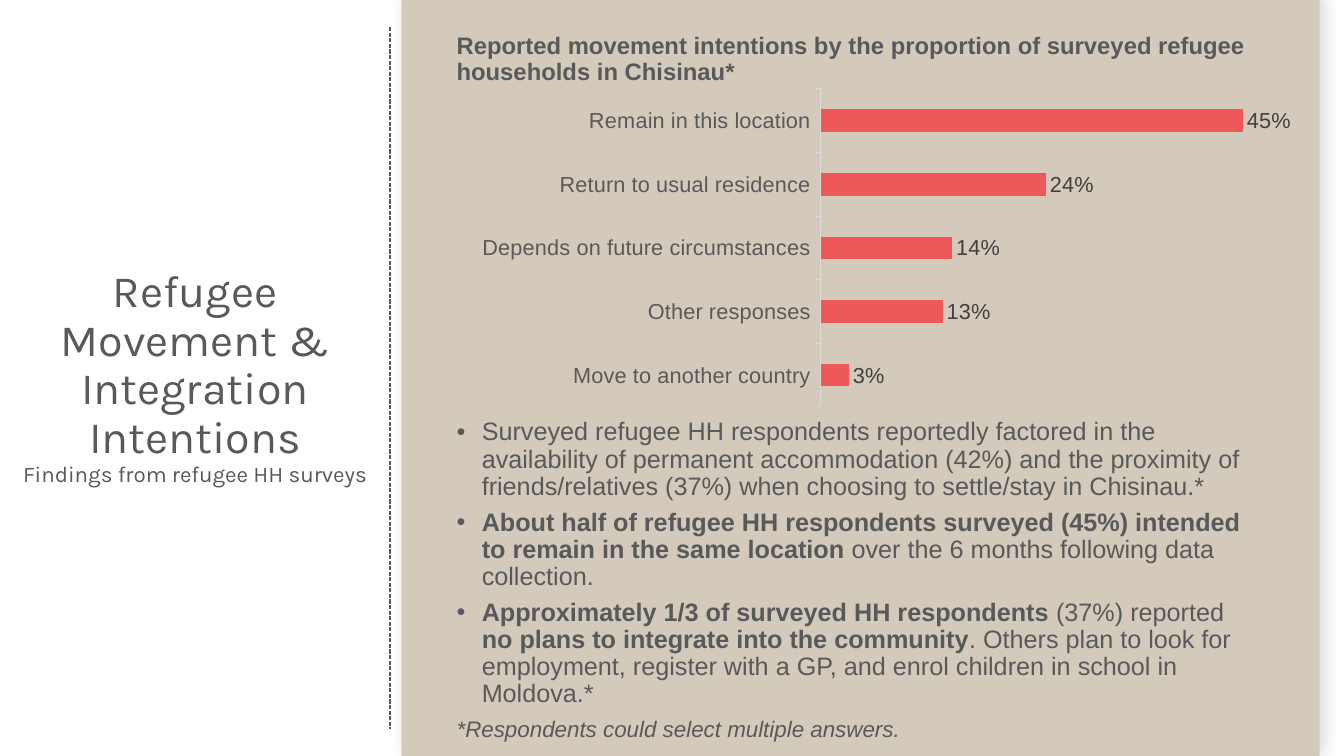
from lxml import etree
from pptx import Presentation
from pptx import util as u
from pptx.chart.data import CategoryChartData
from pptx.dml.color import RGBColor
from pptx.enum import chart as ch, dml, shapes, text
from pptx.oxml import parse_xml
from pptx.oxml.ns import nsdecls, qn

INK = {"text": "58595A", "panel": "D4CABB", "bar": "EE5859",
       "axis": "595959", "label": "404040", "rule": "D9D9D9"}


def ink(name):
    return RGBColor.from_string(INK[name])


class Deck:
    face = "Arial"

    def __init__(self):
        self.prs = Presentation()
        self.prs.slide_width = u.Inches(13.33)
        self.prs.slide_height = u.Inches(7.5)
        self.slide = self.prs.slides.add_slide(self.prs.slide_layouts[6])
        self.items = self.slide.shapes

    def font(self, font, size, color="text", face=None):
        font.size = u.Pt(size)
        font.name = face or self.face
        font.color.rgb = ink(color)

    def panel(self, box):
        shape = self.items.add_shape(shapes.MSO_SHAPE.RECTANGLE, *map(u.Inches, box))
        shape.fill.solid()
        shape.fill.fore_color.rgb = ink("panel")
        shape.line.fill.background()
        shape.shadow.inherit = False
        glow = parse_xml(
            f'<a:outerShdw {nsdecls("a")} blurRad="{u.Pt(12)}" dist="{u.Pt(4)}" '
            f'dir="{324 * 60000}" rotWithShape="0"><a:srgbClr val="000000">'
            '<a:alpha val="14000"/></a:srgbClr></a:outerShdw>')
        shape._element.spPr.find(qn("a:effectLst")).append(glow)

    def rule(self, x, top, end):
        line = self.items.add_connector(
            shapes.MSO_CONNECTOR.STRAIGHT, *map(u.Inches, (x, top, x, end)))
        line.line.color.rgb = ink("text")
        line.line.width = u.Pt(1)
        line.line.dash_style = dml.MSO_LINE.SQUARE_DOT
        etree.SubElement(line._element.spPr, qn("a:effectLst"))

    def text(self, box, paras, size, gap=0, mid=False, align=None,
             face=None, bullet=False):
        frame = self.items.add_textbox(*map(u.Inches, box)).text_frame
        frame.word_wrap = True
        frame.vertical_anchor = (text.MSO_ANCHOR.MIDDLE if mid
                                 else text.MSO_ANCHOR.TOP)
        for i, runs in enumerate(paras):
            para = frame.paragraphs[0] if i == 0 else frame.add_paragraph()
            para.line_spacing = 0.9
            para.space_before = u.Pt(gap)
            para.alignment = align
            if bullet:
                self.bullet(para)
            for words, look in runs:
                if words == "\n":
                    para.add_line_break()
                    continue
                run = para.add_run()
                run.text = words
                self.font(run.font, look.get("size", size), face=face)
                run.font.bold = look.get("bold", False)
                run.font.italic = look.get("italic", False)

    def bullet(self, para):
        props = para._p.get_or_add_pPr()
        props.set("marL", str(u.Inches(0.25)))
        props.set("indent", str(-u.Inches(0.25)))
        etree.SubElement(props, qn("a:buFont")).set("typeface", "Arial")
        etree.SubElement(props, qn("a:buChar")).set("char", "•")

    def bars(self, box, rows, frame):
        data = CategoryChartData(number_format="0%")
        data.categories = [name for name, _ in rows]
        data.add_series("Series 1", [value for _, value in rows])
        chart = self.items.add_chart(
            ch.XL_CHART_TYPE.BAR_CLUSTERED, *map(u.Inches, box), data).chart
        chart.has_legend = chart.has_title = False
        self.font(chart.font, 15.5, "axis")
        cat, val = chart.category_axis, chart.value_axis
        cat.major_tick_mark = ch.XL_TICK_MARK.OUTSIDE
        cat.format.line.color.rgb = ink("rule")
        cat.format.line.width = u.Pt(0.75)
        self.font(cat.tick_labels.font, 15.5, "axis")
        val.minimum_scale, val.maximum_scale = 0, 0.5
        val.has_major_gridlines = False
        val.visible = False
        plot = chart.plots[0]
        plot.gap_width = 182
        plot.vary_by_categories = False
        fill = plot.series[0].format.fill
        fill.solid()
        fill.fore_color.rgb = ink("bar")
        plot.has_data_labels = True
        labels = plot.data_labels
        labels.show_value = True
        labels.number_format = "0%"
        labels.number_format_is_linked = False
        labels.position = ch.XL_LABEL_POSITION.OUTSIDE_END
        self.font(labels.font, 15.5, "label")
        self.layout(chart, frame)

    def layout(self, chart, frame):
        area = chart._chartSpace.chart.plotArea
        for old in area.findall(qn("c:layout")):
            area.remove(old)
        tags = [("layoutTarget", "inner"), ("xMode", "edge"), ("yMode", "edge")]
        tags += zip("xywh", frame)
        body = "".join(f'<c:{tag} val="{val}"/>' for tag, val in tags)
        area.insert(0, parse_xml(
            f'<c:layout {nsdecls("c")}><c:manualLayout>{body}'
            '</c:manualLayout></c:layout>'))


def main():
    deck = Deck()
    bold, plain = {"bold": True}, {}
    left, wide = 4.43, 8.11
    deck.panel((3.98, 0, 9.11, 7.5))
    deck.rule(3.87, 0.27, 7.23)
    deck.text((0.07, 2.22, 3.73, 3.06), [[
        ("Refugee Movement & Integration Intentions", plain),
        ("\n", plain),
        ("Findings from refugee HH surveys", {"size": 16})]],
        32, mid=True, align=text.PP_ALIGN.CENTER, face="Karla")
    deck.text((left, 4.11, wide, 2.67), [
        [("Surveyed refugee HH respondents reportedly factored in the "
          "availability of permanent accommodation (42%) and the proximity of "
          "friends/relatives (37%) when choosing to settle/stay in Chisinau.*",
          plain)],
        [("About half of refugee HH respondents surveyed (45%) intended "
          "to remain in the same location ", bold),
         ("over the 6 months following data collection.", plain)],
        [("Approximately 1/3 of surveyed HH respondents ", bold),
         ("(37%) reported ", plain),
         ("no plans to integrate into the community", bold),
         (". Others plan to look for employment, register with a GP, and "
          "enrol children in school in Moldova.*", plain)]],
        18, gap=6, bullet=True)
    deck.bars((4.73, 0.73, 8.22, 3.46), [
        ("Move to another country", 0.03),
        ("Other responses", 0.13),
        ("Depends on future circumstances", 0.14),
        ("Return to usual residence", 0.24),
        ("Remain in this location", 0.45)], (0.415, 0.044, 0.566, 0.912))
    deck.text((left, 0.2, wide, 0.78), [[
        ("Reported movement intentions by the proportion of surveyed refugee "
         "households in Chisinau*", bold)]], 17, gap=10, mid=True)
    deck.text((left, 7.08, 7.05, 0.42), [[
        ("*Respondents could select multiple answers.", {"italic": True})]],
        16, gap=6)
    deck.prs.save("out.pptx")


if __name__ == "__main__":
    main()
